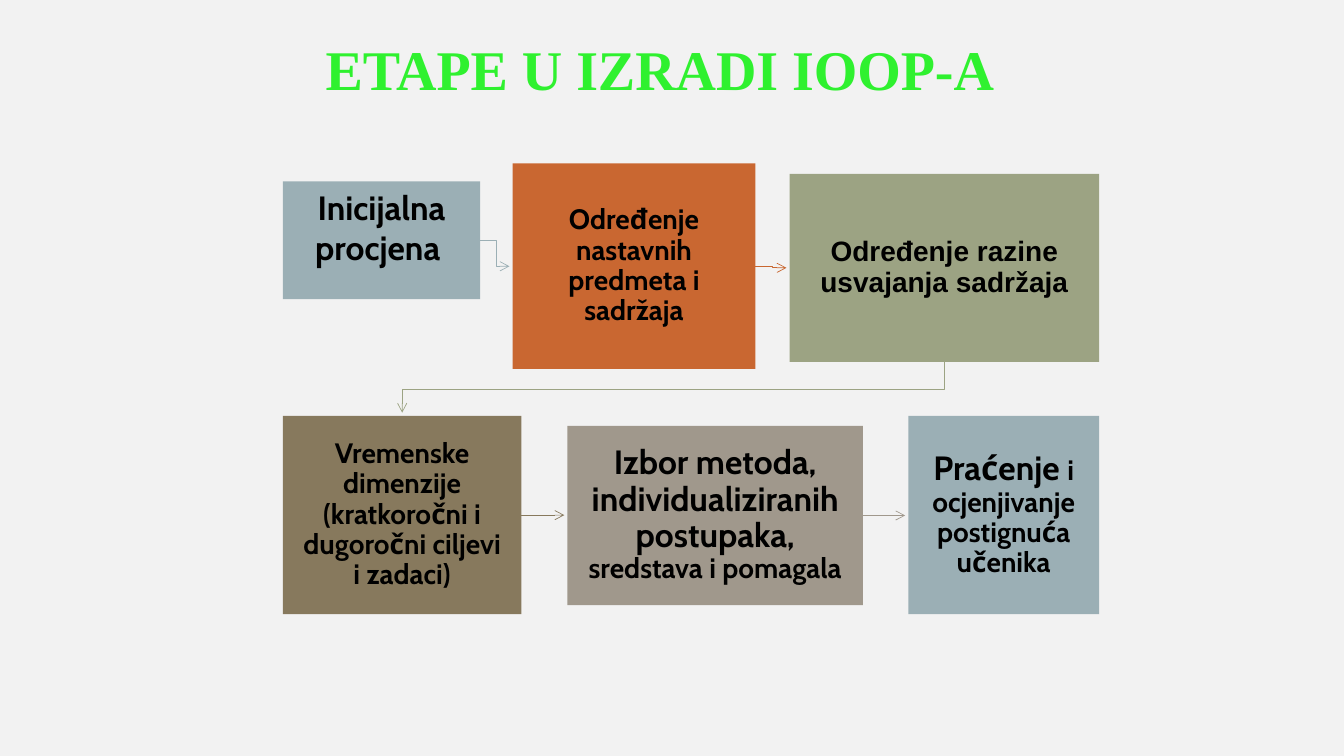
from lxml import etree
from pptx import Presentation
from pptx import util as u
from pptx.dml.color import RGBColor
from pptx.enum import shapes, text
from pptx.oxml import ns

COLORS = {
    "back": "F2F2F2", "title": "2FF12F", "ink": "000000",
    "blue": "9BAFB5", "orange": "C96731", "green": "9CA383",
    "brown": "87795D", "grey": "A0988C",
}
GAP = u.Cm(0.08)


def rgb(name):
    return RGBColor.from_string(COLORS[name])


def write(tf, *runs, font="Cabin", color="ink", inset=0.4, top=None, spacing=0.9):
    tf.word_wrap = True
    tf.margin_left = tf.margin_right = tf.margin_bottom = u.Cm(inset)
    tf.margin_top = u.Cm(inset if top is None else top)
    tf.vertical_anchor = text.MSO_ANCHOR.MIDDLE if top is None else text.MSO_ANCHOR.TOP
    p = tf.paragraphs[0]
    p.alignment = text.PP_ALIGN.CENTER
    p.line_spacing = spacing
    for content, size in runs:
        r = p.add_run()
        r.text = content
        r.font.name = font
        r.font.size = u.Pt(size)
        r.font.bold = True
        r.font.color.rgb = rgb(color)


def add_box(s, x, y, w, h, color, *runs, **fmt):
    sp = s.shapes.add_shape(shapes.MSO_SHAPE.RECTANGLE, u.Cm(x), u.Cm(y), u.Cm(w), u.Cm(h))
    sp.shadow.inherit = False
    sp.fill.solid()
    sp.fill.fore_color.rgb = rgb(color)
    sp.line.fill.background()
    write(sp.text_frame, *runs, **fmt)
    return sp


def center(sp):
    return sp.left + sp.width // 2, sp.top + sp.height // 2


def style_arrow(sp, color):
    sp.line.color.rgb = rgb(color)
    sp.line.width = u.Pt(0.5)
    etree.SubElement(sp.line._get_or_add_ln(), ns.qn("a:tailEnd"), type="arrow")


def add_bent_arrow(s, points, color):
    builder = s.shapes.build_freeform(*points[0])
    builder.add_line_segments(points[1:], close=False)
    sp = builder.convert_to_shape()
    sp.shadow.inherit = False
    sp.fill.background()
    style_arrow(sp, color)


def link_across(s, a, b, color):
    start, end = a.left + a.width, b.left
    mid = (start + end) // 2
    y1, y2 = center(a)[1], center(b)[1]
    add_bent_arrow(s, [(start, y1), (mid, y1), (mid, y2), (end - GAP, y2)], color)


def link_down(s, a, b, color):
    start, end = a.top + a.height, b.top
    mid = (start + end) // 2
    x1, x2 = center(a)[0], center(b)[0]
    add_bent_arrow(s, [(x1, start), (x1, mid), (x2, mid), (x2, end - GAP)], color)


def link_straight(s, a, b, color):
    y = center(a)[1]
    c = s.shapes.add_connector(shapes.MSO_CONNECTOR.STRAIGHT, a.left + a.width, y, b.left - GAP, y)
    etree.SubElement(c._element.spPr, ns.qn("a:effectLst"))
    style_arrow(c, color)


def add_title(s):
    sp = s.shapes.add_textbox(u.Cm(6.93), u.Cm(0.91), u.Cm(19.41), u.Cm(1.6))
    write(sp.text_frame, ("ETAPE U IZRADI IOOP-A", 40),
          font="Times New Roman", color="title", inset=0, spacing=1.0)


def main():
    prs = Presentation()
    prs.slide_width, prs.slide_height = u.Cm(33.87), u.Cm(19.05)
    s = prs.slides.add_slide(prs.slide_layouts[6])
    s.background.fill.solid()
    s.background.fill.fore_color.rgb = rgb("back")

    add_title(s)
    assessment = add_box(s, 7.13, 4.57, 4.97, 2.97, "blue",
                         ("Inicijalna procjena ", 24), inset=0.48, top=0.13, spacing=1.0)
    subjects = add_box(s, 12.92, 4.12, 6.12, 5.18, "orange",
                       ("Određenje nastavnih predmeta i sadržaja", 20))
    level = add_box(s, 19.9, 4.38, 7.8, 4.74, "green",
                    ("Određenje razine usvajanja sadržaja", 20), font="Arial")
    timing = add_box(s, 7.13, 10.48, 6.01, 5, "brown",
                     ("Vremenske dimenzije (kratkoročni i dugoročni ciljevi i zadaci)", 20))
    methods = add_box(s, 14.3, 10.73, 7.45, 4.52, "grey",
                      ("Izbor metoda, individualiziranih postupaka, ", 24),
                      ("sredstava i pomagala", 20), inset=0.48)
    tracking = add_box(s, 22.89, 10.48, 4.81, 5, "blue",
                       ("Praćenje ", 24), ("i ocjenjivanje postignuća učenika", 20), inset=0.48)

    link_across(s, assessment, subjects, "blue")
    link_across(s, subjects, level, "orange")
    link_down(s, level, timing, "green")
    link_straight(s, timing, methods, "brown")
    link_straight(s, methods, tracking, "grey")
    prs.save("out.pptx")


if __name__ == "__main__":
    main()
